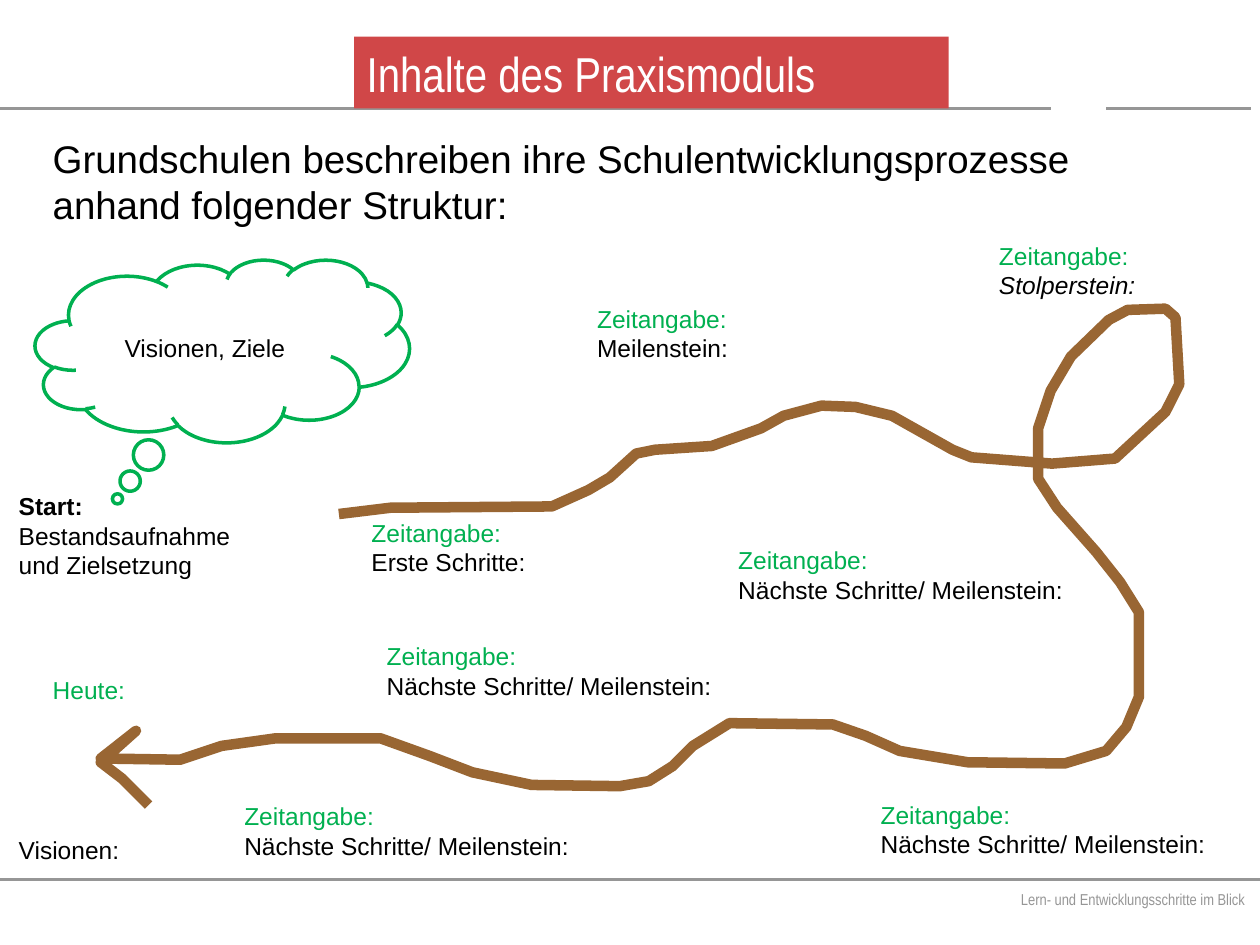
from dataclasses import dataclass

from lxml import etree
from pptx import Presentation
from pptx.dml.color import RGBColor
from pptx.enum import shapes, text
from pptx.oxml import ns
from pptx.util import Inches, Pt

GREEN = RGBColor(0x00, 0xB0, 0x50)
BROWN = RGBColor(0x99, 0x66, 0x33)
GRAY = RGBColor(0x96, 0x96, 0x96)
RED = RGBColor(0xD0, 0x47, 0x48)
BLACK = RGBColor(0, 0, 0)
WHITE = RGBColor(0xFF, 0xFF, 0xFF)

DATE = "Zeitangabe:"
NEXT_STEP = "Nächste Schritte/ Meilenstein:"


@dataclass
class Line:
    words: str
    color: RGBColor = BLACK
    size: float = 14
    bold: bool = False
    italic: bool = False
    font: str = "Arial"


@dataclass
class Label:
    left: float
    top: float
    width: float
    lines: list[Line]


@dataclass
class Rule:
    left: float
    right: float
    top: float


def station(left: float, top: float, width: float, name: str, italic: bool = False) -> Label:
    """Describe a stop on the route: a green date line above its name."""
    return Label(left, top, width, [Line(DATE, GREEN), Line(name, italic=italic)])


RULES = [Rule(0, 10, 6.98), Rule(0, 8.34, 0.86), Rule(8.78, 9.93, 0.86)]

NEXT_STEP_PLACES = [(5.76, 4.28), (6.89, 6.3), (2.97, 5.04), (1.84, 6.31)]

LABELS = [
    Label(0.05, 3.85, 1.89, [
        Line("Start:", bold=True), Line("Bestandsaufnahme"), Line("und Zielsetzung")]),
    station(2.85, 4.06, 1.44, "Erste Schritte:"),
    station(4.64, 2.36, 1.25, "Meilenstein:"),
    station(7.83, 1.86, 1.29, "Stolperstein:", italic=True),
    Label(0.32, 5.31, 0.78, [Line("Heute:", GREEN)]),
    Label(0.05, 6.58, 1, [Line("Visionen:")]),
    Label(0.89, 2.59, 1.48, [Line("Visionen, Ziele")]),
    *(station(left, top, 2.79, NEXT_STEP) for left, top in NEXT_STEP_PLACES),
    Label(0.32, 1.02, 8.46, [
        Line("Grundschulen beschreiben ihre Schulentwicklungsprozesse", size=22),
        Line("anhand folgender Struktur:", size=22)]),
]

TO_CROSSING = [
    (2.69, 4.08), (3.1, 4.03), (4.38, 4.02), (4.67, 3.89), (4.84, 3.79), (5.05, 3.6),
    (5.2, 3.57), (5.65, 3.54), (6.04, 3.4), (6.22, 3.3), (6.52, 3.22), (6.79, 3.23),
    (7.08, 3.3), (7.56, 3.57), (7.71, 3.63), (8.35, 3.68), (8.85, 3.64),
]
LOOP = [
    (9.25, 3.27), (9.36, 3.05), (9.33, 2.52), (9.25, 2.45), (8.95, 2.46), (8.8, 2.54),
    (8.5, 2.83), (8.34, 3.1), (8.24, 3.4), (8.24, 3.8), (8.39, 4.03),
]
WAY_BACK = [
    (8.7, 4.38), (8.89, 4.62), (9.04, 4.86), (9.04, 5.53), (8.94, 5.77), (8.78, 5.96),
    (8.45, 6.06), (7.68, 6.05), (7.14, 5.96), (6.87, 5.84), (6.61, 5.75), (5.79, 5.74),
    (5.5, 5.92), (5.34, 6.08), (5.15, 6.2), (4.92, 6.24), (4.22, 6.23), (3.75, 6.13),
    (3.41, 6), (3.02, 5.86), (2.19, 5.86), (1.76, 5.92), (1.43, 6.03),
]
ARROWHEAD = [(0.8, 6.02), (1.08, 5.8), (0.8, 6.05), (0.97, 6.18), (1.18, 6.39)]
ROUTE = TO_CROSSING + LOOP + WAY_BACK + ARROWHEAD


def write_lines(frame, lines: list[Line], alignment=text.PP_ALIGN.LEFT) -> None:
    for index, line in enumerate(lines):
        paragraph = frame.add_paragraph() if index else frame.paragraphs[0]
        paragraph.alignment = alignment
        run = paragraph.add_run()
        run.text = line.words
        values = {"name": line.font, "size": Pt(line.size),
                  "bold": line.bold, "italic": line.italic}
        for name, value in values.items():
            setattr(run.font, name, value)
        run.font.color.rgb = line.color


def draw_label(slide, label: Label) -> None:
    height = 0.1 + sum(line.size for line in label.lines) * 1.2 / 72
    box = slide.shapes.add_textbox(
        *map(Inches, (label.left, label.top, label.width, height)))
    box.text_frame.word_wrap = False
    write_lines(box.text_frame, label.lines)


def draw_rule(slide, rule: Rule) -> None:
    connector = slide.shapes.add_connector(
        shapes.MSO_CONNECTOR.STRAIGHT,
        *map(Inches, (rule.left, rule.top, rule.right, rule.top)))
    connector.line.color.rgb = GRAY
    connector.line.width = Pt(1.5)
    etree.SubElement(connector.element.spPr, ns.qn("a:effectLst"))


def outline(shape, color: RGBColor, width: float) -> None:
    """Leave the shape unfilled, with a plain line and no shadow."""
    shape.fill.background()
    shape.line.color.rgb = color
    shape.line.width = Pt(width)
    shape.shadow.inherit = False


def draw_title(slide) -> None:
    title = slide.shapes.title
    bounds = {"left": 2.81, "top": 0.29, "width": 4.72, "height": 0.57}
    for name, value in bounds.items():
        setattr(title, name, Inches(value))
    title.fill.solid()
    title.fill.fore_color.rgb = RED
    title.text_frame.vertical_anchor = text.MSO_ANCHOR.MIDDLE
    title.text_frame.auto_size = text.MSO_AUTO_SIZE.NONE
    write_lines(title.text_frame,
                [Line("Inhalte des Praxismoduls", WHITE, 28, font="Arial Narrow")])
    slide.shapes.element.append(title.element)  # in front of the rule


def draw_footer(slide) -> None:
    box = slide.shapes.add_textbox(*map(Inches, (5.92, 7.06, 3.96, 0.15)))
    frame = box.text_frame
    for side in ("left", "top", "right", "bottom"):
        setattr(frame, f"margin_{side}", 0)
    frame.word_wrap = True
    footer = Line("Lern- und Entwicklungsschritte im Blick", GRAY, 9, font="Arial Narrow")
    write_lines(frame, [footer], text.PP_ALIGN.RIGHT)


def draw_cloud(slide) -> None:
    cloud = slide.shapes.add_shape(
        shapes.MSO_SHAPE.CLOUD_CALLOUT, *map(Inches, (0.28, 2.06, 2.97, 1.45)))
    cloud.adjustments[0], cloud.adjustments[1] = -0.28, 0.81
    outline(cloud, GREEN, 2)


def draw_route(slide) -> None:
    points = [(Inches(x), Inches(y)) for x, y in ROUTE]
    builder = slide.shapes.build_freeform(*points[0])
    builder.add_line_segments(points[1:], close=False)
    route = builder.convert_to_shape()
    outline(route, BROWN, 6)
    etree.SubElement(route.element.spPr.find(ns.qn("a:ln")), ns.qn("a:round"))


def main() -> None:
    presentation = Presentation()
    presentation.slide_width, presentation.slide_height = Inches(10), Inches(7.5)
    slide = presentation.slides.add_slide(presentation.slide_layouts[5])
    for rule in RULES:
        draw_rule(slide, rule)
    draw_footer(slide)
    draw_cloud(slide)
    draw_route(slide)
    for label in LABELS:
        draw_label(slide, label)
    draw_title(slide)
    presentation.save("out.pptx")


if __name__ == "__main__":
    main()
